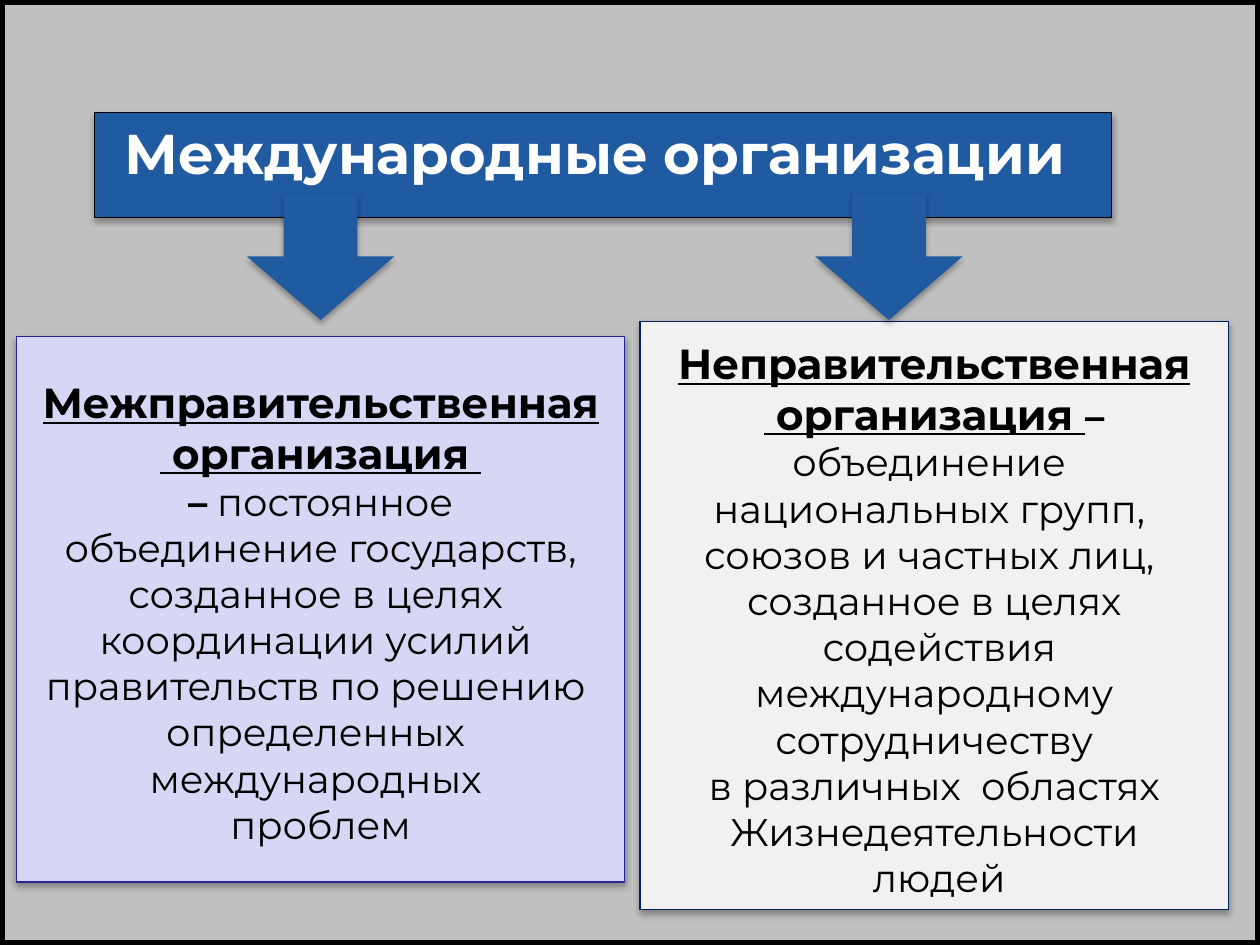
from lxml import etree
from pptx import Presentation
from pptx.dml.color import RGBColor
from pptx.enum import shapes, text
from pptx.oxml.ns import qn
from pptx.util import Inches, Pt

THEME = {
    "font": "Montserrat",
    "background": "C0C0C0", "blue": "205AA0", "black": "000000", "white": "FFFFFF",
    "title": 32, "heading": 24, "body": 22,
    "thin": 0.75, "frame": 6,
}

# Content: each line is a list of (text, style) runs
TITLE = "Международные организации "
CARDS = [
    {
        "box": (0.13, 2.67, 4.83, 4.33), "inset": 0.32, "fill": "D6D6F5", "line": "262699",
        "lines": [
            [("Межправительственная", "heading")],
            [(" организация ", "heading")],
            [("–", "dash"), (" постоянное", "body")],
            [(" объединение государств, ", "body")],
            [("созданное в целях ", "body")],
            [("координации усилий ", "body")],
            [("правительств по решению ", "body")],
            [("определенных ", "body")],
            [("международных ", "body")],
            [("проблем", "body")],
        ],
    },
    {
        "box": (5.08, 2.55, 4.67, 4.67), "inset": 0.13, "fill": "F1F1F1", "line": "002060",
        "lines": [
            [("Неправительственная", "heading")],
            [(" организация ", "heading"), ("–", "dash")],
            [("объединение ", "body")],
            [("национальных групп, ", "body")],
            [("союзов и частных лиц, ", "body")],
            [("созданное в целях", "body")],
            [(" содействия", "body")],
            [(" международному ", "body")],
            [("сотрудничеству", "body")],
            [(" в различных  областях ", "body")],
            [("Жизнедеятельности", "body")],
            [(" людей", "body")],
        ],
    },
]
ARROW_LEFTS = (1.96, 6.47)

# Style: size, bold, underline
STYLES = {
    "heading": (THEME["heading"], True, True),
    "dash": (THEME["body"], True, False),
    "body": (THEME["body"], False, False),
}


def rgb(value):
    return RGBColor.from_string(value)


def paint(sp, fill=None, line=None, width=THEME["thin"], shadow=True):
    if fill:
        sp.fill.solid()
        sp.fill.fore_color.rgb = rgb(fill)
    else:
        sp.fill.background()
    if line:
        sp.line.color.rgb = rgb(line)
        sp.line.width = Pt(width)
    else:
        sp.line.fill.background()
    sp.shadow.inherit = False
    if shadow:
        effects = sp._element.spPr.find(qn("a:effectLst"))
        outer = etree.SubElement(effects, qn("a:outerShdw"), blurRad=str(Pt(3.5)),
                                 dist=str(Pt(2.2)), dir="5400000", rotWithShape="0")
        color = etree.SubElement(outer, qn("a:srgbClr"), val=THEME["black"])
        etree.SubElement(color, qn("a:alpha"), val="32000")


def style_run(r, size, bold, underline, color):
    r.font.name = THEME["font"]
    r.font.size = Pt(size)
    r.font.bold = bold
    r.font.underline = underline
    r.font.color.rgb = rgb(color)


def add_shape(slide, kind, box):
    return slide.shapes.add_shape(kind, *map(Inches, box))


def add_title(slide):
    sp = slide.shapes.title
    sp.left, sp.top, sp.width, sp.height = map(Inches, (0.75, 0.89, 8.07, 0.64))
    paint(sp, THEME["blue"], THEME["black"])
    tf = sp.text_frame
    tf.text = TITLE
    tf.word_wrap = False
    tf.auto_size = text.MSO_AUTO_SIZE.SHAPE_TO_FIT_TEXT
    tf.vertical_anchor = text.MSO_ANCHOR.TOP
    p = tf.paragraphs[0]
    p.alignment = text.PP_ALIGN.CENTER
    style_run(p.runs[0], THEME["title"], True, False, THEME["white"])


def add_card(slide, card):
    sp = add_shape(slide, shapes.MSO_SHAPE.RECTANGLE, card["box"])
    paint(sp, card["fill"], card["line"])
    tf = sp.text_frame
    tf.word_wrap = False
    tf.vertical_anchor = text.MSO_ANCHOR.TOP
    tf.margin_top = Inches(card["inset"])
    for i, line in enumerate(card["lines"]):
        p = tf.add_paragraph() if i else tf.paragraphs[0]
        p.alignment = text.PP_ALIGN.CENTER
        for words, style in line:
            r = p.add_run()
            r.text = words
            style_run(r, *STYLES[style], THEME["black"])


def main():
    prs = Presentation()
    prs.slide_width, prs.slide_height = Inches(10), Inches(7.5)
    slide = prs.slides.add_slide(prs.slide_layouts[5])
    slide.background.fill.solid()
    slide.background.fill.fore_color.rgb = rgb(THEME["background"])

    # Heading and the two definitions
    add_title(slide)
    for card in CARDS:
        add_card(slide, card)

    # Arrows from the heading to the definitions
    for left in ARROW_LEFTS:
        arrow = add_shape(slide, shapes.MSO_SHAPE.DOWN_ARROW, (left, 1.53, 1.17, 1.01))
        paint(arrow, THEME["blue"])

    # Border around the slide
    border = add_shape(slide, shapes.MSO_SHAPE.RECTANGLE, (0, 0, 10, 7.5))
    paint(border, line=THEME["black"], width=THEME["frame"], shadow=False)

    prs.save("out.pptx")


if __name__ == "__main__":
    main()
